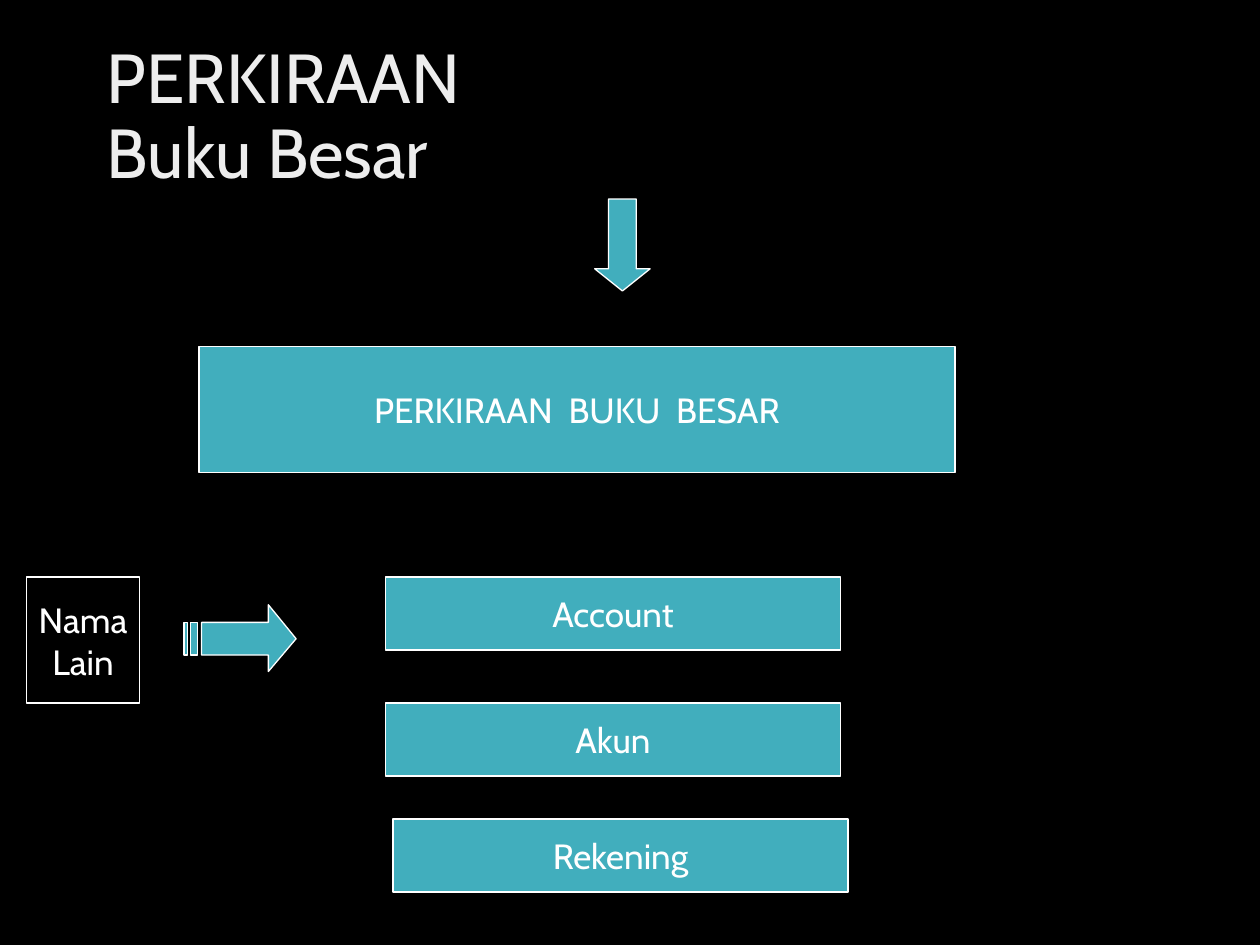
from dataclasses import dataclass

import pptx
import pptx.dml.color
import pptx.enum.shapes
import pptx.enum.text
import pptx.util

Inches = pptx.util.Inches
Pt = pptx.util.Pt
RGBColor = pptx.dml.color.RGBColor
MSO_SHAPE = pptx.enum.shapes.MSO_SHAPE
PP_ALIGN = pptx.enum.text.PP_ALIGN
MSO_ANCHOR = pptx.enum.text.MSO_ANCHOR

BLACK = RGBColor(0x00, 0x00, 0x00)
WHITE = RGBColor(0xFF, 0xFF, 0xFF)
TITLE_GREY = RGBColor(0xED, 0xED, 0xED)
TEAL = RGBColor(0x41, 0xAE, 0xBD)
FONT = "Cabin"


@dataclass
class Box:
    text: str
    left: float
    top: float
    width: float
    height: float
    filled: bool = True
    inset_x: float = 0.08
    inset_y: float = 0.04
    wrap: bool = False


BOXES = [
    Box("PERKIRAAN  BUKU  BESAR", 1.58, 2.75, 6, 1),
    Box("Nama Lain", 0.21, 4.58, 0.9, 1, False, 0, 0, True),
    Box("Account", 3.06, 4.58, 3.61, 0.58),
    Box("Akun", 3.06, 5.58, 3.61, 0.58),
    Box("Rekening", 3.12, 6.5, 3.61, 0.58),
]

ARROW_CONTOURS = [
    [(2.13, 4.8), (2.13, 4.94), (1.6, 4.94), (1.6, 5.2),
     (2.13, 5.2), (2.13, 5.33), (2.35, 5.07)],
    [(1.51, 4.94), (1.51, 5.2), (1.57, 5.2), (1.57, 4.94)],
    [(1.46, 4.94), (1.46, 5.2), (1.49, 5.2), (1.49, 4.94)],
]


def style_shape(sp, filled: bool = True) -> None:
    sp.shadow.inherit = False
    if filled:
        sp.fill.solid()
        sp.fill.fore_color.rgb = TEAL
    else:
        sp.fill.background()
    sp.line.color.rgb = WHITE
    sp.line.width = Pt(0.75)


def style_text(p, size: float, color: RGBColor) -> None:
    for r in p.runs:
        r.font.name = FONT
        r.font.size = Pt(size)
        r.font.color.rgb = color


def add_title(s) -> None:
    sp = s.shapes.add_textbox(Inches(0.75), Inches(0.37), Inches(8.5), Inches(1.14))
    tf = sp.text_frame
    tf.word_wrap = True
    tf.vertical_anchor = MSO_ANCHOR.MIDDLE
    p = tf.paragraphs[0]
    p.text = "PERKIRAAN\vBuku Besar"
    p.line_spacing = 0.9
    style_text(p, 39.6, TITLE_GREY)


def add_box(s, box: Box) -> None:
    sp = s.shapes.add_shape(
        MSO_SHAPE.RECTANGLE, Inches(box.left), Inches(box.top),
        Inches(box.width), Inches(box.height))
    style_shape(sp, box.filled)
    tf = sp.text_frame
    tf.word_wrap = box.wrap
    tf.vertical_anchor = MSO_ANCHOR.MIDDLE
    tf.margin_left = tf.margin_right = Inches(box.inset_x)
    tf.margin_top = tf.margin_bottom = Inches(box.inset_y)
    p = tf.paragraphs[0]
    p.text = box.text
    p.alignment = PP_ALIGN.CENTER
    style_text(p, 20, WHITE)


def add_down_arrow(s) -> None:
    sp = s.shapes.add_shape(
        MSO_SHAPE.DOWN_ARROW, Inches(4.72), Inches(1.58), Inches(0.44), Inches(0.73))
    sp.adjustments[0] = 0.5
    sp.adjustments[1] = 0.4
    style_shape(sp)


def add_striped_arrow(s) -> None:
    contours = [[(Inches(x), Inches(y)) for x, y in c] for c in ARROW_CONTOURS]
    builder = s.shapes.build_freeform(*contours[0][0])
    for i, contour in enumerate(contours):
        if i:
            builder.move_to(*contour[0])
        builder.add_line_segments(contour[1:], close=True)
    style_shape(builder.convert_to_shape())


def main() -> None:
    prs = pptx.Presentation()
    prs.slide_width = Inches(10)
    prs.slide_height = Inches(7.5)
    s = prs.slides.add_slide(prs.slide_layouts[6])
    s.background.fill.solid()
    s.background.fill.fore_color.rgb = BLACK
    add_title(s)
    add_down_arrow(s)
    add_striped_arrow(s)
    for box in BOXES:
        add_box(s, box)
    prs.save("out.pptx")


if __name__ == "__main__":
    main()
